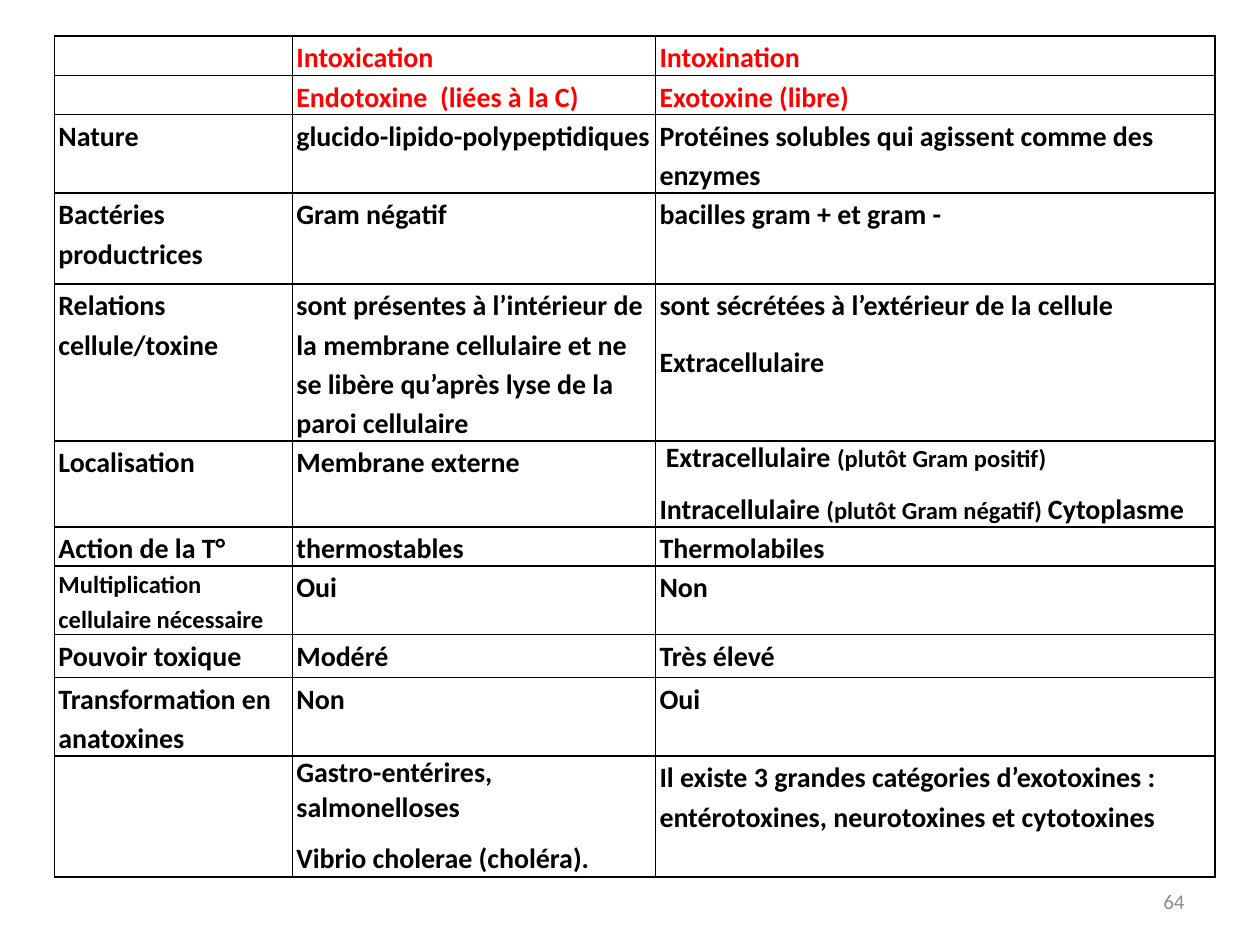
from pptx import Presentation
from pptx.dml.color import RGBColor
from pptx.enum.text import MSO_ANCHOR, PP_ALIGN
from pptx.oxml.ns import qn
from pptx.util import Pt
from lxml.etree import SubElement

BLACK = RGBColor(0x00, 0x00, 0x00)
RED = RGBColor(0xFF, 0x00, 0x00)
GRAY = RGBColor(0x8C, 0x8C, 0x8C)
WHITE = RGBColor(0xFF, 0xFF, 0xFF)
FONT = "Calibri"
SIZE, SMALL = 16, 14
HEADER_ROWS = 2

# A cell is a list of paragraphs, a paragraph a list of (text, size) runs;
# a plain string stands for one paragraph at the normal size.
LOCATIONS = [
    [(" Extracellulaire ", SIZE), ("(plutôt Gram positif)", SMALL)],
    [("Intracellulaire ", SIZE), ("(plutôt Gram négatif) ", SMALL),
     ("Cytoplasme", SIZE)],
]
DISEASES = [
    [("Gastro-entérires, salmonelloses", SIZE)],
    [("Vibrio cholerae (choléra).", SIZE)],
]
RELATIONS = [
    [("sont sécrétées à l’extérieur de la cellule", SIZE)],
    [("Extracellulaire", SIZE)],
]
SINGLE_SPACED = (LOCATIONS, DISEASES)

COL_WIDTHS = [136, 207.5, 319.7]
# Row height, then the three cells
ROWS = [
    (22.4, "", "Intoxication", "Intoxination"),
    (22.4, "", "Endotoxine  (liées à la C)", "Exotoxine (libre)"),
    (44.9, "Nature", "glucido-lipido-polypeptidiques",
     "Protéines solubles qui agissent comme des enzymes"),
    (52, "Bactéries productrices", "Gram négatif", "bacilles gram + et gram -"),
    (89.8, "Relations cellule/toxine",
     "sont présentes à l’intérieur de la membrane cellulaire et ne se libère "
     "qu’après lyse de la paroi cellulaire", RELATIONS),
    (49.1, "Localisation", "Membrane externe", LOCATIONS),
    (22.4, "Action de la T°", "thermostables", "Thermolabiles"),
    (39.2, [[("Multiplication cellulaire nécessaire", SMALL)]], "Oui", "Non"),
    (24.5, "Pouvoir toxique", "Modéré", "Très élevé"),
    (44.9, "Transformation en anatoxines", "Non", "Oui"),
    (69, "", DISEASES,
     "Il existe 3 grandes catégories d’exotoxines : entérotoxines, "
     "neurotoxines et cytotoxines"),
]


def add_run(p, text, size, color, bold=False):
    r = p.add_run()
    r.text = text
    r.font.name, r.font.size, r.font.bold = FONT, Pt(size), bold
    r.font.color.rgb = color


def add_borders(cell):
    tcPr = cell._tc.get_or_add_tcPr()
    for i, side in enumerate(("a:lnL", "a:lnR", "a:lnT", "a:lnB")):
        ln = SubElement(tcPr, qn(side), w=str(Pt(1)))
        fill = SubElement(ln, qn("a:solidFill"))
        SubElement(fill, qn("a:srgbClr"), val=str(BLACK))
        tcPr.remove(ln)
        tcPr.insert(i, ln)  # borders come before the fill


def fill_cell(cell, content, color):
    cell.margin_left = cell.margin_right = Pt(2.2)
    cell.margin_top = cell.margin_bottom = 0
    cell.fill.solid()
    cell.fill.fore_color.rgb = WHITE
    add_borders(cell)
    paragraphs = [[(content, SIZE)]] if isinstance(content, str) else content
    tf = cell.text_frame
    for i, runs in enumerate(paragraphs):
        p = tf.add_paragraph() if i else tf.paragraphs[0]
        p.line_spacing = 1.0 if content in SINGLE_SPACED else 1.15
        p.space_after = Pt(10)
        for text, size in runs:
            if text:
                add_run(p, text, size, color, bold=True)
            else:
                p.line_spacing = 1.0
                p.font.size = Pt(size)


prs = Presentation()
prs.slide_width, prs.slide_height = Pt(720), Pt(540)
s = prs.slides.add_slide(prs.slide_layouts[6])

# Slide number
sp = s.shapes.add_textbox(Pt(516), Pt(500.5), Pt(168), Pt(28.75))
tf = sp.text_frame
tf.word_wrap = True
tf.vertical_anchor = MSO_ANCHOR.MIDDLE
tf.paragraphs[0].alignment = PP_ALIGN.RIGHT
add_run(tf.paragraphs[0], "64", 12, GRAY)

# Comparison table
heights = [row[0] for row in ROWS]
table = s.shapes.add_table(len(ROWS), len(COL_WIDTHS), Pt(31.2), Pt(20.6),
                           Pt(sum(COL_WIDTHS)), Pt(sum(heights))).table
table.first_row = table.horz_banding = False
for column, width in zip(table.columns, COL_WIDTHS):
    column.width = Pt(width)
for i, (height, *cells) in enumerate(ROWS):
    table.rows[i].height = Pt(height)
    for j, content in enumerate(cells):
        fill_cell(table.cell(i, j), content, RED if i < HEADER_ROWS else BLACK)

prs.save("out.pptx")
